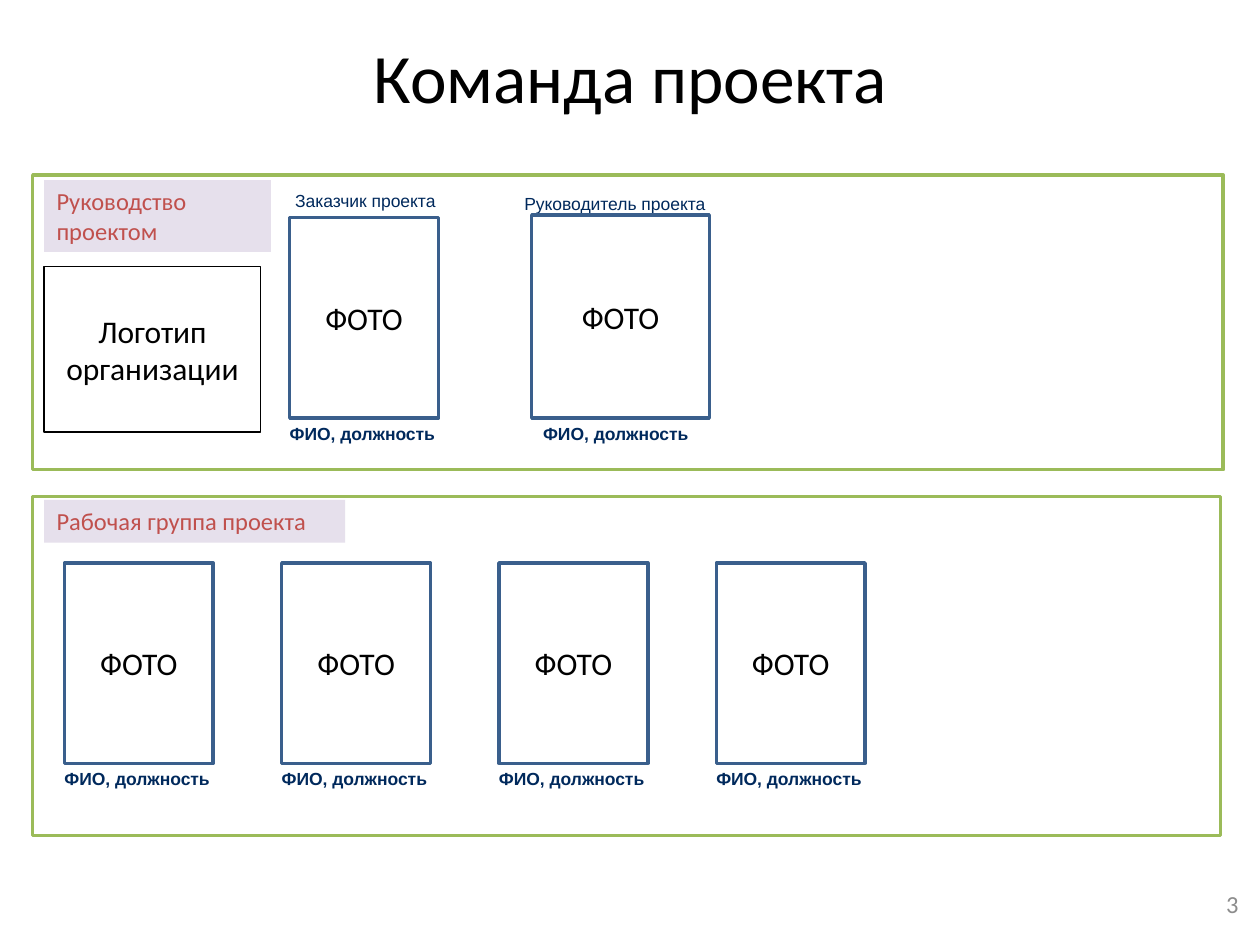
from pptx import Presentation
from pptx.dml.color import RGBColor
from pptx.enum.shapes import MSO_SHAPE
from pptx.enum.text import MSO_ANCHOR, PP_ALIGN
from pptx.util import Cm, Pt

BLACK = RGBColor(0x00, 0x00, 0x00)
WHITE = RGBColor(0xFF, 0xFF, 0xFF)
GREEN = RGBColor(0x9B, 0xBB, 0x59)
LILAC = RGBColor(0xE6, 0xE0, 0xEC)
RED = RGBColor(0xC0, 0x50, 0x4D)
BLUE = RGBColor(0x3A, 0x5F, 0x8C)
NAVY = RGBColor(0x00, 0x29, 0x5C)
GRAY = RGBColor(0x8C, 0x8C, 0x8C)

# Content: all lengths in centimetres, as left, top, width, height
TITLE = "Команда проекта"
PHOTO = "ФОТО"
CAPTION = "ФИО, должность"
LOGO = "Логотип организации"
PAGE_NUMBER = "3"

FRAMES = [(0.66, 10.01, 23.95, 6.83), (0.66, 3.53, 24, 5.94)]
SECTIONS = [
    ("Руководство проектом", (0.89, 3.63, 4.57, 1.45)),
    ("Рабочая группа проекта", (0.89, 10.08, 6.07, 0.86)),
]
ROLES = [
    ("Заказчик проекта", (5.23, 3.84, 4.27, 0.43), PP_ALIGN.CENTER, 0),
    ("Руководитель проекта", (8.84, 3.89, 5.99, 0.43), PP_ALIGN.LEFT, 1.73),
]
# Photo place and how far its caption is shifted to the right
LEADERS = [((5.84, 4.39, 3, 4.04), 0), ((10.72, 4.34, 3.58, 4.09), 0.23)]
MEMBER_COUNT = 4
MEMBER_LEFT, MEMBER_TOP, MEMBER_STEP = 1.3, 11.35, 4.38
MEMBERS = [((MEMBER_LEFT + index * MEMBER_STEP, MEMBER_TOP, 3, 4.04), 0)
           for index in range(MEMBER_COUNT)]


def write_text(shape, text, size=18, color=BLACK, font="Calibri", bold=False,
               align=PP_ALIGN.CENTER, anchor=MSO_ANCHOR.MIDDLE, margins=None):
    frame = shape.text_frame
    frame.word_wrap = True
    frame.vertical_anchor = anchor
    if margins is not None:
        frame.margin_left = Cm(margins)
        frame.margin_top = frame.margin_right = frame.margin_bottom = 0
    para = frame.paragraphs[0]
    para.alignment = align
    span = para.add_run()
    span.text = text
    span.font.size = Pt(size)
    span.font.name = font
    span.font.bold = bold
    span.font.color.rgb = color


def add_box(slide, place, fill=None, line=None, line_width=2):
    box = slide.shapes.add_shape(MSO_SHAPE.RECTANGLE, *map(Cm, place))
    box.shadow.inherit = False
    if fill is None:
        box.fill.background()
    else:
        box.fill.solid()
        box.fill.fore_color.rgb = fill
    if line is None:
        box.line.fill.background()
    else:
        box.line.color.rgb = line
        box.line.width = Pt(line_width)
    return box


def add_label(slide, text, place, indent=0, **text_format):
    label = slide.shapes.add_textbox(*map(Cm, place))
    write_text(label, text, size=10, color=NAVY, font="Arial",
               anchor=MSO_ANCHOR.TOP, margins=indent, **text_format)


def main():
    deck = Presentation()
    deck.slide_width, deck.slide_height = Cm(25.4), Cm(19.05)
    slide = deck.slides.add_slide(deck.slide_layouts[5])

    # Title
    title = slide.shapes.title
    title.left, title.top, title.width, title.height = map(
        Cm, (0.69, 0.91, 24.03, 1.22))
    write_text(title, TITLE, size=39.6)

    # Frames and section headings
    for place in FRAMES:
        add_box(slide, place, fill=WHITE, line=GREEN)
    for text, place in SECTIONS:
        write_text(add_box(slide, place, fill=LILAC), text, size=14,
                   color=RED, align=PP_ALIGN.LEFT, anchor=MSO_ANCHOR.TOP)

    # Organisation logo field and role names
    logo = add_box(slide, (0.89, 5.38, 4.37, 3.33), line=BLACK, line_width=0.75)
    write_text(logo, LOGO)
    for text, place, align, indent in ROLES:
        add_label(slide, text, place, indent=indent, align=align)

    # Photos with captions
    for place, shift in LEADERS + MEMBERS:
        left, top, width, height = place
        add_label(slide, CAPTION, (left + shift, top + height + 0.1, 4.06, 0.43),
                  bold=True, align=PP_ALIGN.LEFT)
        write_text(add_box(slide, place, fill=WHITE, line=BLUE), PHOTO)

    # Page number
    number = slide.shapes.add_textbox(*map(Cm, (19.3, 17.7, 5.92, 1.02)))
    write_text(number, PAGE_NUMBER, size=14, color=GRAY, align=PP_ALIGN.RIGHT)

    deck.save("out.pptx")


if __name__ == "__main__":
    main()
